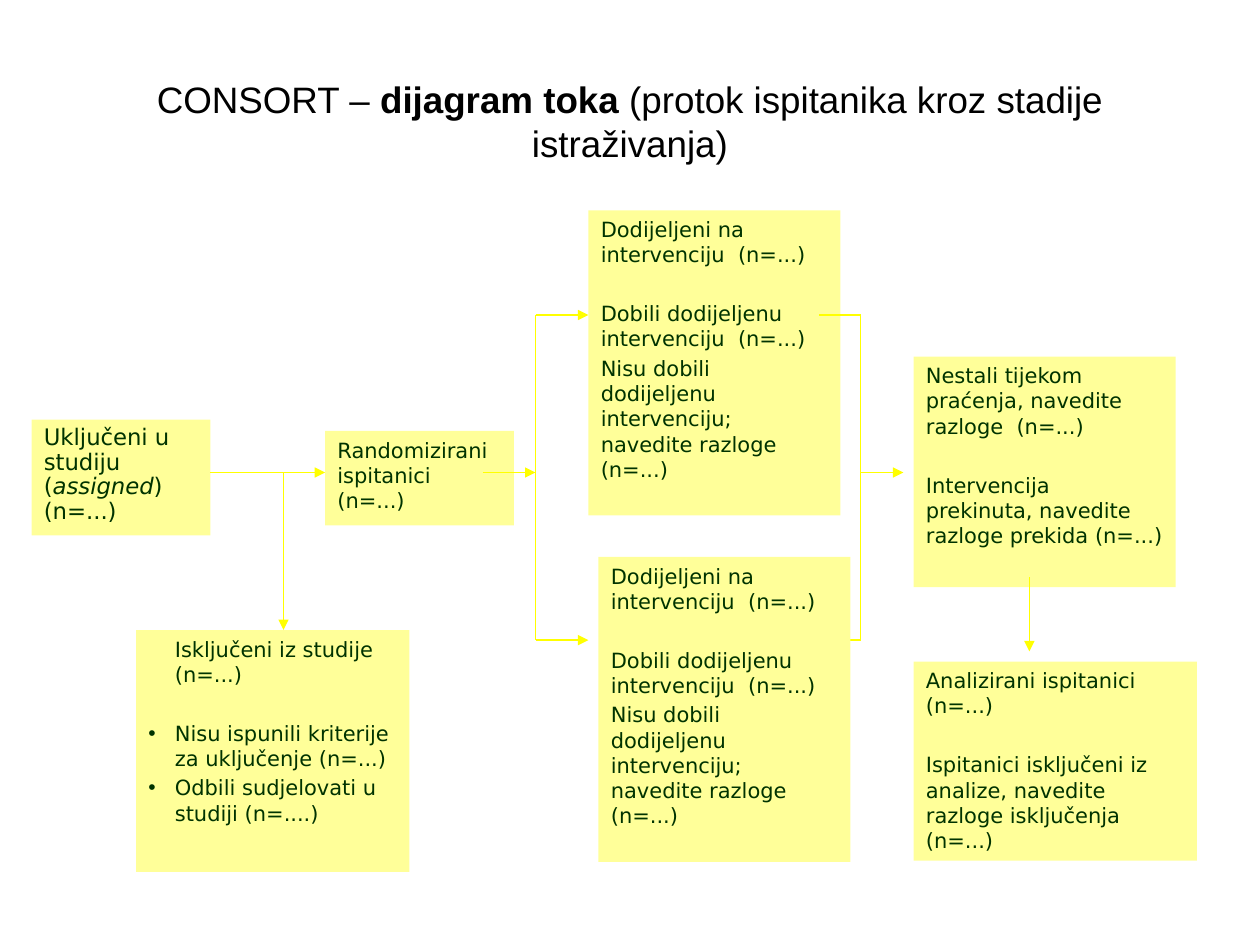
from dataclasses import dataclass

from lxml import etree
from pptx import Presentation
from pptx import util as u
from pptx.dml.color import RGBColor
from pptx.enum import shapes, text
from pptx.oxml.ns import qn


@dataclass(frozen=True)
class Theme:
    box: RGBColor = RGBColor(0xFF, 0xFF, 0x99)
    line: RGBColor = RGBColor(0xFF, 0xFF, 0x00)
    ink: RGBColor = RGBColor(0x00, 0x33, 0x00)
    title_ink: RGBColor = RGBColor(0, 0, 0)
    title_font: str = "Arial"
    body_font: str = "DejaVu Sans"
    title_size: float = 21
    lead_size: float = 13
    body_size: float = 12
    line_width: float = 0.75
    para_gap: float = 2.4
    section_gap: float = 19.3
    indent: float = 0.21


class FlowSlide:
    def __init__(self, prs, theme):
        self.s = prs.slides.add_slide(prs.slide_layouts[6])
        self.t = theme

    def run(self, p, content, font, size, color, bold=False, italic=False):
        r = p.add_run()
        r.text = content
        r.font.name, r.font.size = font, u.Pt(size)
        r.font.bold, r.font.italic = bold, italic
        r.font.color.rgb = color

    def title(self, at, parts):
        sp = self.s.shapes.add_textbox(*map(u.Inches, at))
        tf = sp.text_frame
        tf.word_wrap = True
        tf.vertical_anchor = text.MSO_ANCHOR.MIDDLE
        p = tf.paragraphs[0]
        p.alignment = text.PP_ALIGN.CENTER
        for content, bold in parts:
            self.run(p, content, self.t.title_font, self.t.title_size,
                     self.t.title_ink, bold=bold)

    def rect(self, at):
        sp = self.s.shapes.add_shape(shapes.MSO_SHAPE.RECTANGLE, *map(u.Inches, at))
        sp.shadow.inherit = False
        sp.fill.solid()
        sp.fill.fore_color.rgb = self.t.box
        sp.line.fill.background()
        tf = sp.text_frame
        tf.word_wrap = True
        tf.vertical_anchor = text.MSO_ANCHOR.TOP
        return tf

    def lead_box(self, at, parts):
        p = self.rect(at).paragraphs[0]
        p.alignment = text.PP_ALIGN.LEFT
        p.line_spacing = 0.9
        for content, italic in parts:
            self.run(p, content, self.t.body_font, self.t.lead_size,
                     self.t.ink, italic=italic)

    def box(self, at, heading, items=(), bullets=False):
        tf = self.rect(at)
        for i, content in enumerate((heading, *items)):
            p = tf.paragraphs[0] if i == 0 else tf.add_paragraph()
            p.alignment = text.PP_ALIGN.LEFT
            if i:
                p.space_before = u.Pt(self.t.section_gap if i == 1 else self.t.para_gap)
            if bullets:
                self.indent(p, bullet=i > 0)
            self.run(p, content, self.t.body_font, self.t.body_size, self.t.ink)

    def indent(self, p, bullet):
        pPr = p._p.get_or_add_pPr()
        left = u.Inches(self.t.indent)
        pPr.set("marL", str(left))
        pPr.set("indent", str(-left if bullet else 0))
        if bullet:
            etree.SubElement(pPr, qn("a:buFont")).set("typeface", self.t.title_font)
            etree.SubElement(pPr, qn("a:buChar")).set("char", "•")

    def line(self, start, end, arrow=False):
        c = self.s.shapes.add_connector(shapes.MSO_CONNECTOR.STRAIGHT,
                                        *map(u.Inches, (*start, *end)))
        c.line.color.rgb = self.t.line
        c.line.width = u.Pt(self.t.line_width)
        if arrow:
            etree.SubElement(c.line._get_or_add_ln(), qn("a:tailEnd")).set("type", "triangle")
        etree.SubElement(c._element.spPr, qn("a:effectLst"))

    def arrow(self, start, end):
        self.line(start, end, arrow=True)


def main():
    prs = Presentation()
    prs.slide_width, prs.slide_height = u.Inches(10), u.Inches(7.5)
    s = FlowSlide(prs, Theme())

    upper, mid, lower = 2.5, 3.75, 5.08
    split, merge, excluded, last = 4.25, 6.83, 2.25, 8.17
    allocated = ("Dodijeljeni na intervenciju  (n=...)",
                 ("Dobili dodijeljenu intervenciju  (n=...)",
                  "Nisu dobili dodijeljenu intervenciju; navedite razloge (n=...)"))

    s.title((0.75, 0.33, 8.5, 1.25),
            (("CONSORT – ", False), ("dijagram toka", True),
             (" (protok ispitanika kroz stadije istraživanja)", False)))

    s.lead_box((0.25, 3.33, 1.42, 0.92),
               (("Uključeni u studiju (", False), ("assigned", True), (") (n=...)", False)))
    s.box((1.08, 5, 2.17, 1.92), "Isključeni iz studije (n=...)",
          ("Nisu ispunili kriterije za uključenje (n=...)",
           "Odbili sudjelovati u studiji (n=....)"), bullets=True)
    s.box((2.58, 3.42, 1.5, 0.75), "Randomizirani ispitanici (n=...)")
    s.box((4.67, 1.67, 2, 2.42), *allocated)
    s.box((7.25, 2.83, 2.08, 1.83), "Nestali tijekom praćenja, navedite razloge  (n=...)",
          ("Intervencija prekinuta, navedite razloge prekida (n=...)",))
    s.box((7.25, 5.25, 2.25, 1.58), "Analizirani ispitanici (n=...)",
          ("Ispitanici isključeni iz analize, navedite razloge isključenja  (n=...)",))

    s.arrow((1.67, mid), (2.58, mid))
    s.arrow((excluded, mid), (excluded, 5))
    s.arrow((3.83, mid), (split, mid))
    for x in (split, merge):
        s.line((x, upper), (x, lower))
    for y in (upper, lower):
        s.arrow((split, y), (4.67, y))
        s.line((merge, y), (6.5, y))
    s.arrow((merge, mid), (7.17, mid))
    s.arrow((last, 4.58), (last, 5.17))

    s.box((4.75, 4.42, 2, 2.42), *allocated)
    prs.save("out.pptx")


if __name__ == "__main__":
    main()
